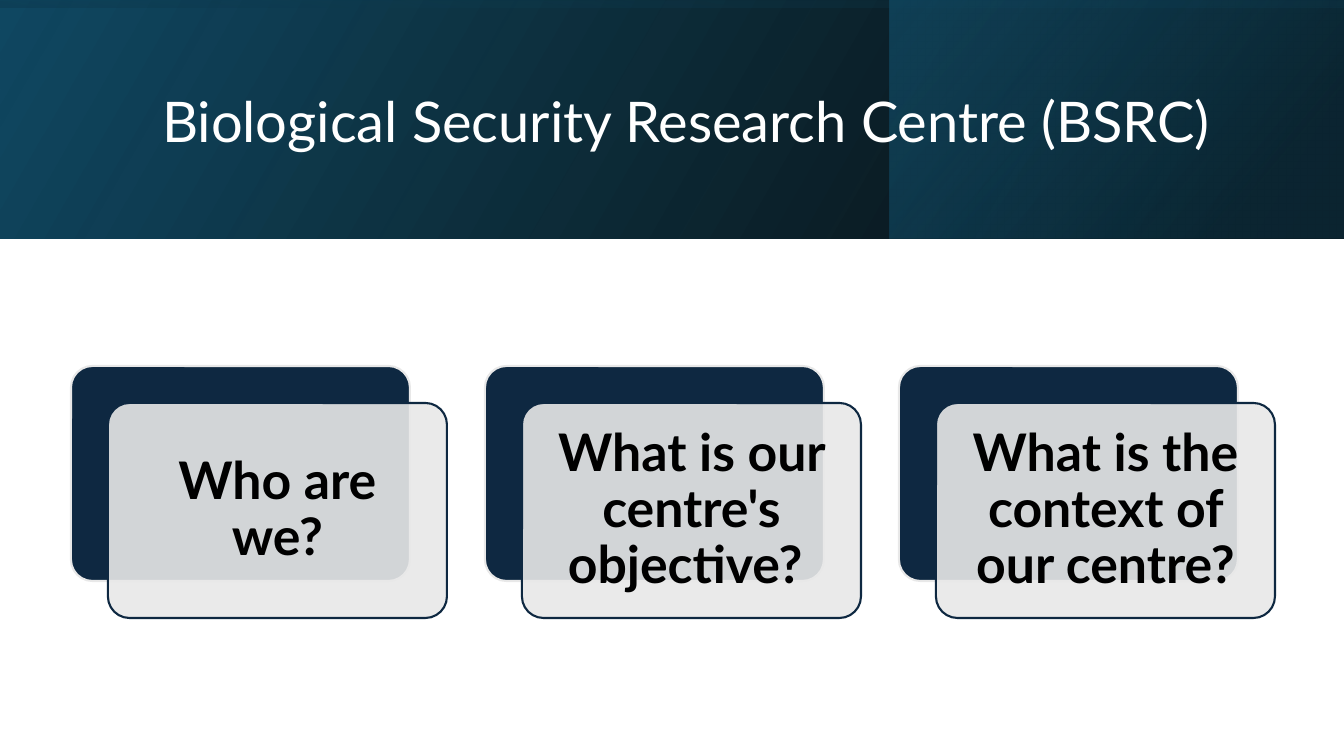
from lxml import etree
from pptx import Presentation
from pptx.dml.color import RGBColor
from pptx.enum.shapes import MSO_SHAPE
from pptx.enum.text import MSO_ANCHOR, MSO_AUTO_SIZE, PP_ALIGN
from pptx.oxml import parse_xml
from pptx.oxml.ns import nsdecls, qn
from pptx.util import Emu, Pt

NAVY = RGBColor(0x0E, 0x28, 0x41)
GREY = RGBColor(0xE8, 0xE8, 0xE8)
WHITE = RGBColor(0xFF, 0xFF, 0xFF)
BLACK = RGBColor(0x00, 0x00, 0x00)
DEEP_TEAL = RGBColor(0x10, 0x48, 0x62)
DARK_TEAL = RGBColor(0x0B, 0x30, 0x41)
TEAL = RGBColor(0x15, 0x60, 0x82)
FONT = "Lato"
SLIDE_WIDTH, SLIDE_HEIGHT, BANNER_HEIGHT = 1344, 756, 239


def px(value):
    return Emu(round(value * 914400 / 100.8))


def add_box(preset, left, top, width, height):
    shape = slide.shapes.add_shape(preset, px(left), px(top), px(width), px(height))
    shape.shadow.inherit = False
    return shape


presentation = Presentation()
presentation.slide_width = px(SLIDE_WIDTH)
presentation.slide_height = px(SLIDE_HEIGHT)
slide = presentation.slides.add_slide(presentation.slide_layouts[5])

overlay_offset = (SLIDE_WIDTH - BANNER_HEIGHT) // 2
banner_layers = [
    ((0, 0, SLIDE_WIDTH, BANNER_HEIGHT), 0, 330,
     [(0, BLACK, 96), (100, DEEP_TEAL, 100)]),
    ((890, 0, 453, BANNER_HEIGHT), 0, 320,
     [(19, DARK_TEAL, 68), (100, TEAL, 48)]),
    ((overlay_offset, -overlay_offset, BANNER_HEIGHT, SLIDE_WIDTH), 270, 350,
     [(23, DEEP_TEAL, 16), (99, BLACK, 45)]),
]
for bounds, rotation, angle, stops in banner_layers:
    layer = add_box(MSO_SHAPE.RECTANGLE, *bounds)
    layer.rotation = rotation
    layer.line.fill.background()
    properties = layer._element.spPr
    properties.find(qn("a:xfrm")).set("flipH", "1")
    stop_xml = "".join(
        f'<a:gs pos="{position * 1000}"><a:srgbClr val="{color}">'
        f'<a:alpha val="{opacity * 1000}"/></a:srgbClr></a:gs>'
        for position, color, opacity in stops)
    gradient = parse_xml(
        f'<a:gradFill {nsdecls("a")} rotWithShape="1"><a:gsLst>{stop_xml}</a:gsLst>'
        f'<a:lin ang="{angle * 60000}" scaled="0"/></a:gradFill>')
    properties.find(qn("a:prstGeom")).addnext(gradient)

title = slide.shapes.title
title.left, title.top, title.width, title.height = px(152), px(38), px(1072), px(173)
slide.shapes._spTree.append(title._element)
title.text_frame.text = "Biological Security Research Centre (BSRC)"
title.text_frame.auto_size = MSO_AUTO_SIZE.NONE
title.text_frame.vertical_anchor = MSO_ANCHOR.MIDDLE
paragraph = title.text_frame.paragraphs[0]
paragraph.alignment = PP_ALIGN.LEFT
paragraph.line_spacing = 0.9
paragraph.font.name = FONT
paragraph.font.size = Pt(40)
paragraph.font.color.rgb = WHITE

CARD_LEFT, CARD_TOP, CARD_WIDTH, CARD_HEIGHT = 71, 366, 339, 215
CARD_PITCH, CARD_OFFSET = 414, 37
questions = [
    "Who are we?",
    "What is our centre's objective? ",
    "What is the context of our centre?",
]
for index, question in enumerate(questions):
    left = CARD_LEFT + index * CARD_PITCH
    for offset, fill, line in [(0, NAVY, GREY), (CARD_OFFSET, GREY, NAVY)]:
        card = add_box(MSO_SHAPE.ROUNDED_RECTANGLE, left + offset, CARD_TOP + offset,
                       CARD_WIDTH, CARD_HEIGHT)
        card.adjustments[0] = 0.1
        card.fill.solid()
        card.fill.fore_color.rgb = fill
        card.line.color.rgb = line
        card.line.width = Pt(1.5)

    fill_color = card._element.spPr.find(qn("a:solidFill")).find(qn("a:srgbClr"))
    etree.SubElement(fill_color, qn("a:alpha")).set("val", "90000")
    frame = card.text_frame
    frame.word_wrap = True
    frame.vertical_anchor = MSO_ANCHOR.MIDDLE
    frame.margin_left = frame.margin_right = px(21)
    frame.margin_top = frame.margin_bottom = px(21)
    frame.text = question
    paragraph = frame.paragraphs[0]
    paragraph.alignment = PP_ALIGN.CENTER
    paragraph.line_spacing = 0.9
    paragraph.font.name = FONT
    paragraph.font.size = Pt(37)
    paragraph.font.bold = True
    paragraph.font.color.rgb = BLACK

presentation.save("out.pptx")
